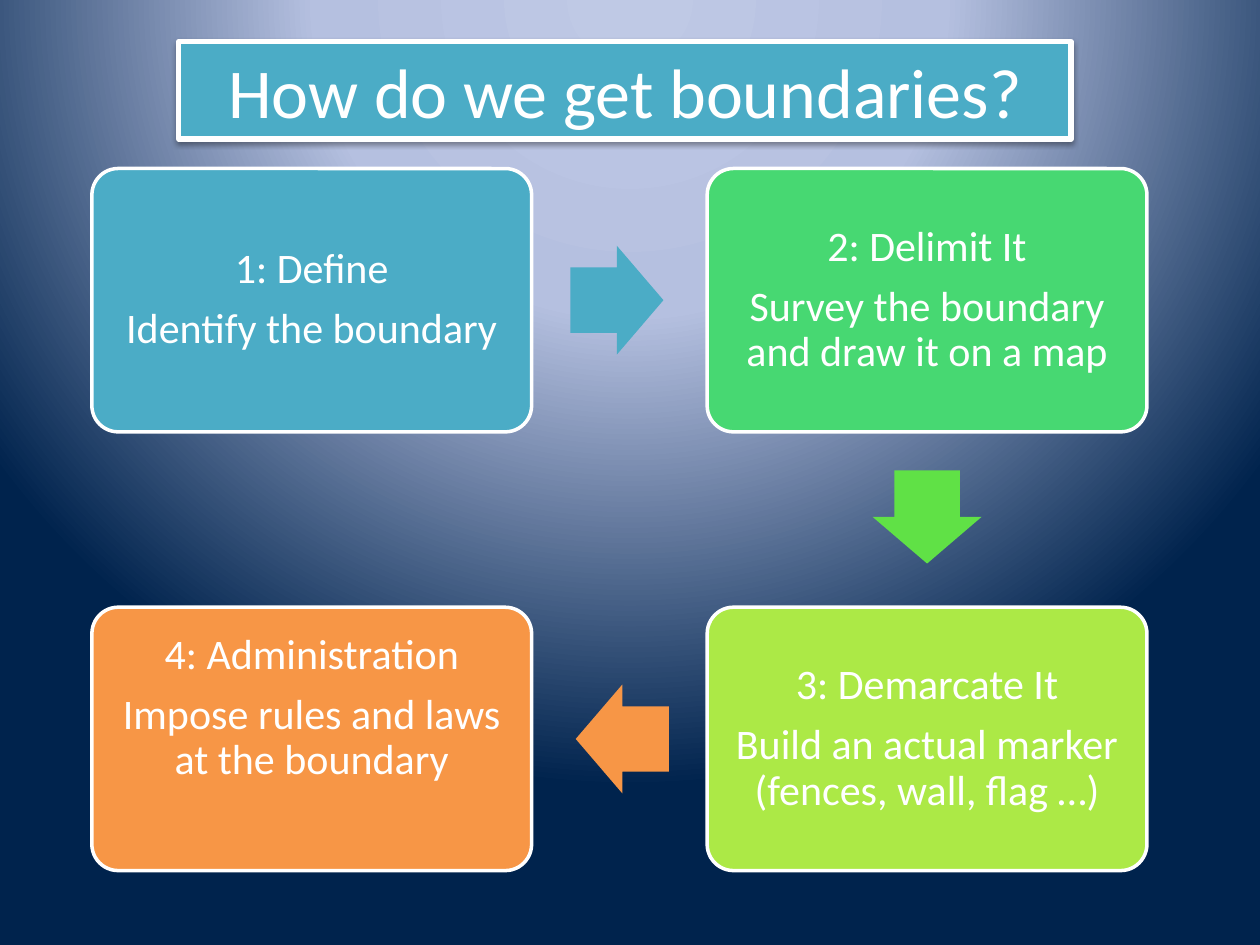
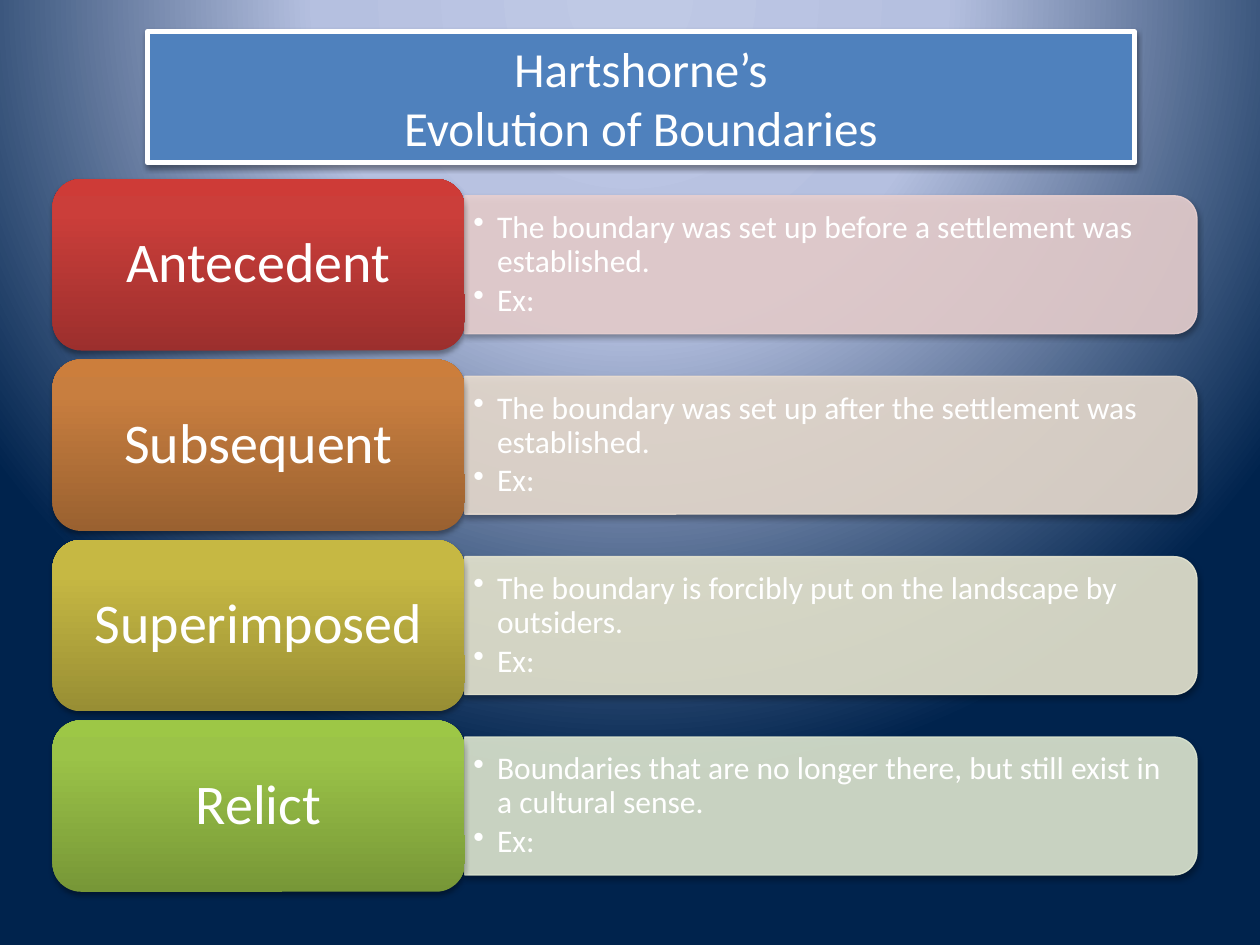
from copy import deepcopy

from pptx import Presentation
from pptx.dml.color import RGBColor
from pptx.enum.shapes import MSO_SHAPE
from pptx.enum.text import MSO_ANCHOR, PP_ALIGN
from pptx.oxml import parse_xml
from pptx.oxml.ns import nsdecls, qn
from pptx.oxml.xmlchemy import OxmlElement
from pptx.util import Pt

RECT = MSO_SHAPE.RECTANGLE
ROUNDED = MSO_SHAPE.ROUNDED_RECTANGLE
TAB = MSO_SHAPE.ROUND_2_SAME_RECTANGLE
ARROW = MSO_SHAPE.RIGHT_ARROW
MIDDLE = MSO_ANCHOR.MIDDLE
LEFT, CENTER = PP_ALIGN.LEFT, PP_ALIGN.CENTER

FONT = "Calibri"
WHITE = "FFFFFF"
TEAL, ORANGE = "4BACC6", "F79646"
color = RGBColor.from_string


def add_panel(slide, preset, bounds, fill, line=None, line_width=2,
              opacity=100, shadow=None, rotation=0):
    """Add a preset shape; shadow is (opacity %, distance in points)."""
    panel = slide.shapes.add_shape(preset, *(Pt(v) for v in bounds))
    panel.rotation = rotation
    panel.fill.solid()
    panel.fill.fore_color.rgb = color(fill)
    if line:
        panel.line.color.rgb = color(line)
        panel.line.width = Pt(line_width)
    else:
        panel.line.fill.background()
    properties = panel._element.spPr
    if opacity < 100:
        for tint in properties.iter(qn("a:srgbClr")):
            alpha = OxmlElement("a:alpha")
            alpha.set("val", str(opacity * 1000))
            tint.append(alpha)
    panel.shadow.inherit = False
    if shadow:
        strength, distance = shadow
        properties.find(qn("a:effectLst")).append(parse_xml(
            f'<a:outerShdw {nsdecls("a")} blurRad="{Pt(3.1)}" dist="{Pt(distance)}" '
            f'dir="5400000" rotWithShape="0"><a:srgbClr val="000000">'
            f'<a:alpha val="{strength * 1000}"/></a:srgbClr></a:outerShdw>'))
    return panel


def write_text(shape, lines, size, align=CENTER, spacing=0.9, after=0,
               insets=(7.2, 3.6, 7.2, 3.6), bullet_indent=0):
    """Fill a shape with paragraphs; insets are left, top, right, bottom."""
    frame = shape.text_frame
    frame.word_wrap = True
    frame.vertical_anchor = MIDDLE
    (frame.margin_left, frame.margin_top,
     frame.margin_right, frame.margin_bottom) = (Pt(v) for v in insets)
    for number, line in enumerate(lines):
        paragraph = frame.add_paragraph() if number else frame.paragraphs[0]
        paragraph.text = line
        paragraph.alignment = align
        paragraph.line_spacing = spacing
        paragraph.space_after = Pt(after)
        if bullet_indent:
            paragraph.level = 1
            settings = paragraph._p.get_or_add_pPr()
            settings.set("marL", str(Pt(bullet_indent)))
            settings.set("indent", str(-Pt(bullet_indent)))
            bullet = OxmlElement("a:buChar")
            bullet.set("char", "•")
            settings.append(bullet)
        paragraph.font.name = FONT
        paragraph.font.size = Pt(size)
        paragraph.font.color.rgb = color(WHITE)


prs = Presentation()
prs.slide_width, prs.slide_height = Pt(720), Pt(540)

# Radial background shared through the master
backdrop = prs.slide_master.background.fill
backdrop.solid()
backdrop_properties = prs.slide_master._element.find(".//" + qn("p:bgPr"))
stops = "".join(f'<a:gs pos="{pos * 1000}"><a:srgbClr val="{tint}"/></a:gs>'
                for pos, tint in ((0, "BFC9E5"), (40, "B5C0E0"), (100, "00234D")))
backdrop_properties.replace(backdrop_properties[0], parse_xml(
    f'<a:gradFill {nsdecls("a")} rotWithShape="1"><a:gsLst>{stops}</a:gsLst>'
    '<a:path path="circle"><a:fillToRect l="50000" t="-80000" r="50000" b="180000"/>'
    '</a:path></a:gradFill>'))

blank = prs.slide_layouts[6]
steps_slide = prs.slides.add_slide(blank)
types_slide = prs.slides.add_slide(blank)

# Slide 1: four steps, clockwise
STEP_W, STEP_H = 251.3, 150.5
COLUMNS, ROWS = (52.5, 404.1), (96.3, 347)
steps = [
    (0, 0, TEAL, "1: Define", "Identify the boundary", 7.2),
    (1, 0, "47D872", "2: Delimit It", "Survey the boundary and draw it on a map", 7.2),
    (1, 1, "ACE946", "3: Demarcate It", "Build an actual marker (fences, wall, flag …)", 7.2),
    (0, 1, ORANGE, "4: Administration", "Impose rules and laws at the boundary", 42),
]
for column, row, fill, heading, action, bottom_inset in steps:
    step = add_panel(steps_slide, ROUNDED, (COLUMNS[column], ROWS[row], STEP_W, STEP_H),
                     fill, line=WHITE)
    step.adjustments[0] = 0.1
    write_text(step, [heading, action], size=24, after=8.4,
               insets=(7.2, 7.2, 7.2, bottom_inset))

ARROW_W, ARROW_H = 53.2, 62.2
for center_x, center_y, rotation, fill in (
        (352.5, ROWS[0] + STEP_H / 2, 0, TEAL),
        (COLUMNS[1] + STEP_W / 2, 295.4, 90, "60E146"),
        (355.6, ROWS[1] + STEP_H / 2, 180, ORANGE)):
    arrow = add_panel(steps_slide, ARROW,
                      (center_x - ARROW_W / 2, center_y - ARROW_H / 2, ARROW_W, ARROW_H),
                      fill, rotation=rotation)
    arrow.adjustments[0], arrow.adjustments[1] = 0.6, 0.5

# Slide 2: four boundary types, each with its definition
LABEL_X, LABEL_W, LABEL_H = 30, 235.6, 98
FIRST_Y, ROW_STEP = 102.3, 103.1
DETAIL_X, DETAIL_W, DETAIL_H = LABEL_X + LABEL_W, 418.4, 78.8
DETAIL_TEXT_W, DETAIL_TEXT_H = 414.7, 70.6
boundary_types = [
    ("Antecedent", "The boundary was set up before a settlement was established.",
     "E8D0D0", ("9C2F2D", "CB3E3A", "CE3B37")),
    ("Subsequent", "The boundary was set up after the settlement was established.",
     "E8DCD0", ("9A6130", "C87E3F", "CC7E3C")),
    ("Superimposed", "The boundary is forcibly put on the landscape by outsiders.",
     "E7E6D1", ("988E34", "C6B843", "C9BB41")),
    ("Relict", "Boundaries that are no longer there, but still exist in a cultural sense.",
     "DEE7D1", ("779737", "9BC348", "9DC746")),
]
for index, (name, definition, tint, shades) in enumerate(boundary_types):
    top = FIRST_Y + index * ROW_STEP
    center_y = top + LABEL_H / 2
    # Turned a quarter so that the rounded corners face right
    add_panel(types_slide, TAB,
              (DETAIL_X + (DETAIL_W - DETAIL_H) / 2, center_y - DETAIL_W / 2,
               DETAIL_H, DETAIL_W),
              tint, line=tint, line_width=0.75, opacity=90, shadow=(35, 1.8), rotation=90)
    detail = types_slide.shapes.add_textbox(
        Pt(DETAIL_X), Pt(center_y - DETAIL_TEXT_H / 2), Pt(DETAIL_TEXT_W), Pt(DETAIL_TEXT_H))
    write_text(detail, [definition, "Ex:"], size=18, align=LEFT, after=2.7,
               insets=(5, 2.7, 5, 2.7), bullet_indent=13.5)

    label = add_panel(types_slide, ROUNDED, (LABEL_X, top, LABEL_W, LABEL_H),
                      shades[0], shadow=(35, 1.8))
    label.fill.gradient()
    label.fill.gradient_angle = 90
    stop_list = label._element.spPr.find(".//" + qn("a:gsLst"))
    stop_list.append(deepcopy(stop_list[-1]))
    for stop, position, shade in zip(label.fill.gradient_stops, (0, 0.8, 1), shades):
        stop.position = position
        stop.color.rgb = color(shade)
    write_text(label, [name], size=32, insets=(9.4, 4.7, 9.4, 4.7))

# Title bands
for slide, bounds, fill, lines, size in (
        (steps_slide, (102.2, 23.8, 509.8, 55.7), TEAL, ["How do we get boundaries?"], 40),
        (types_slide, (84.2, 18, 564, 75), "4F81BD",
         ["Hartshorne’s", "Evolution of Boundaries"], 28)):
    title = add_panel(slide, RECT, bounds, fill, line=WHITE, line_width=3, shadow=(38, 1.6))
    write_text(title, lines, size=size, spacing=1.0)

prs.save("out.pptx")
